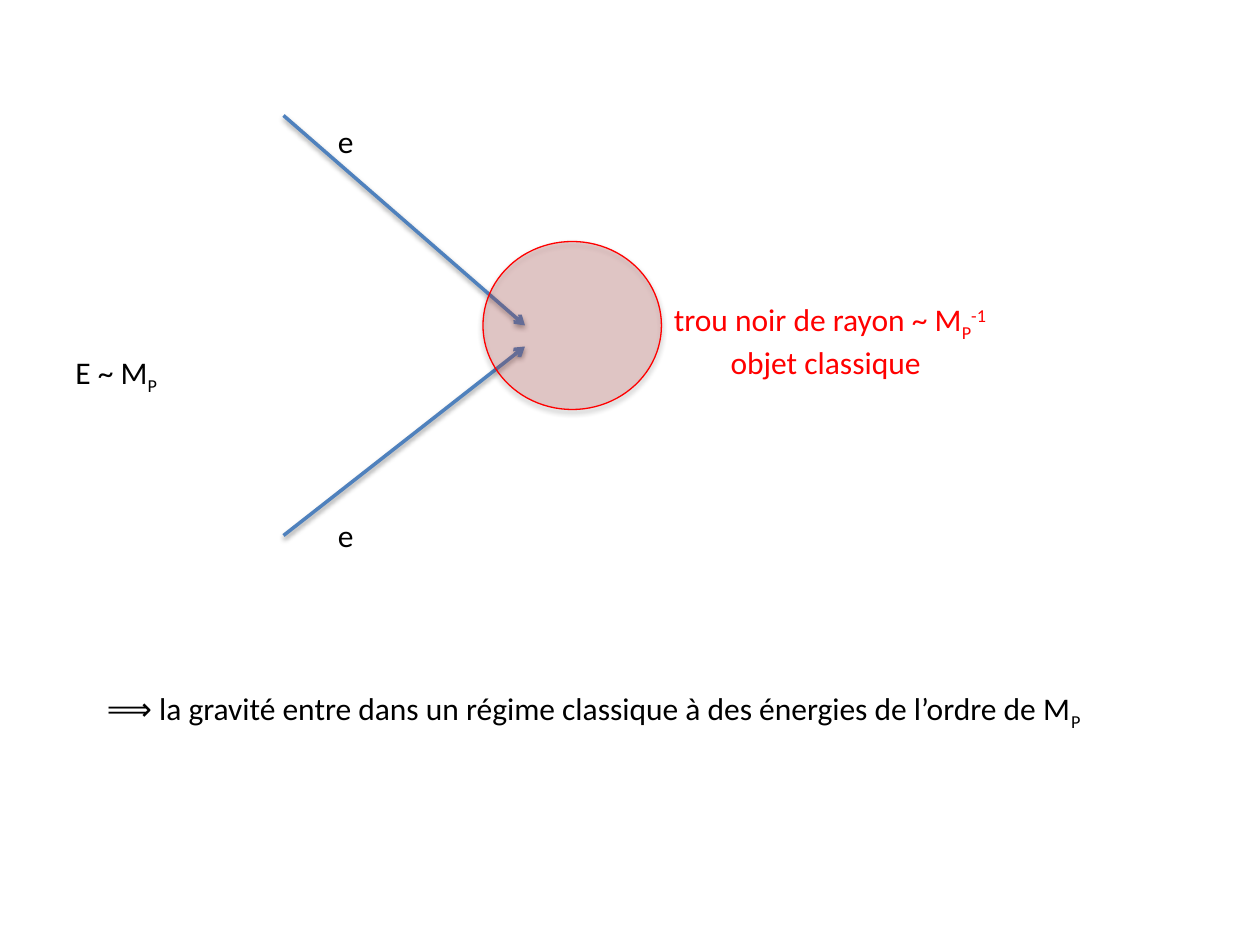
from lxml import etree
from pptx import Presentation
from pptx.dml.color import RGBColor
from pptx.enum.shapes import MSO_CONNECTOR as CONN, MSO_SHAPE as SHAPE
from pptx.enum.text import MSO_AUTO_SIZE as AUTO
from pptx.oxml.ns import qn
from pptx.util import Inches, Pt

BLACK, RED, BLUE, ROSE = "000000", "FF0000", "4F81BD", "C0504D"
SUB, SUP = -25, 30  # baseline shifts in percent


def rgb(hex_color):
    return RGBColor.from_string(hex_color)


def add_xml(parent, tag, **attrs):
    el = etree.SubElement(parent, qn(tag))
    for name, value in attrs.items():
        el.set(name, str(value))
    return el


class Diagram:
    """Style and current slide; lengths are cells of 1/12 inch."""
    font, size = "Calibri", Pt(18)

    def __init__(self, slide):
        self.shapes = slide.shapes

    def cells(self, *values):
        return [Inches(v / 12) for v in values]

    def shadow(self, sp, alpha, dist):
        effects = add_xml(sp._element.spPr, "a:effectLst")
        outer = add_xml(effects, "a:outerShdw", blurRad=Pt(3.1), dist=Pt(dist),
                        dir=90 * 60000, rotWithShape=0)
        color = add_xml(outer, "a:srgbClr", val=BLACK)
        add_xml(color, "a:alpha", val=alpha * 1000)

    def arrow(self, x1, y1, x2, y2):
        sp = self.shapes.add_connector(CONN.STRAIGHT, *self.cells(x1, y1, x2, y2))
        sp.line.color.rgb = rgb(BLUE)
        sp.line.width = Pt(2)
        add_xml(sp.line._get_or_add_ln(), "a:tailEnd", type="arrow")
        self.shadow(sp, 38, 1.6)

    def disc(self, x, y, w, h, alpha):
        sp = self.shapes.add_shape(SHAPE.OVAL, *self.cells(x, y, w, h))
        sp.fill.solid()
        sp.fill.fore_color.rgb = rgb(ROSE)
        color = sp._element.spPr.find(qn("a:solidFill"))[0]
        add_xml(color, "a:alpha", val=alpha * 1000)
        sp.line.color.rgb = rgb(RED)
        sp.line.width = Pt(0.75)
        self.shadow(sp, 35, 1.8)

    def label(self, x, y, w, h, *lines, color=BLACK, indent=0):
        """Each line is a list of (text, baseline) pairs; indent moves later lines."""
        tf = self.shapes.add_textbox(*self.cells(x, y, w, h)).text_frame
        tf.word_wrap = False
        tf.auto_size = AUTO.SHAPE_TO_FIT_TEXT
        for i, line in enumerate(lines):
            p = tf.add_paragraph() if i else tf.paragraphs[0]
            if i and indent:
                p._p.get_or_add_pPr().set("marL", str(Inches(indent / 12)))
            for text, base in line:
                r = p.add_run()
                r.text = text
                r.font.name, r.font.size = self.font, self.size
                r.font.color.rgb = rgb(color)
                if base:
                    r.font._element.set("baseline", str(base * 1000))


def main():
    prs = Presentation()
    prs.slide_width, prs.slide_height = Inches(10), Inches(7.5)
    d = Diagram(prs.slides.add_slide(prs.slide_layouts[6]))

    # Incoming electrons and the black hole over their tips
    d.arrow(27, 11, 50, 31)
    d.arrow(27, 51, 50, 33)
    d.disc(46, 23, 17, 16, alpha=24)

    # Labels
    d.label(6, 33, 10.4, 4.8, [("E ~ M", 0), ("P", SUB)])
    d.label(63, 28, 32.8, 8.5,
            [("trou noir de rayon ~ M", 0), ("P", SUB), ("-1", SUP)],
            [("objet classique", 0)], color=RED, indent=5.4)
    for y in (11, 48.6):
        d.label(31, y, 4, 4.8, [("e", 0)])

    # Conclusion
    d.label(9, 65, 96.7, 4.8,
            [("⟹ la gravité entre dans un régime classique à des énergies "
              "de l’ordre de M", 0), ("P", SUB)])

    prs.save("out.pptx")


if __name__ == "__main__":
    main()
